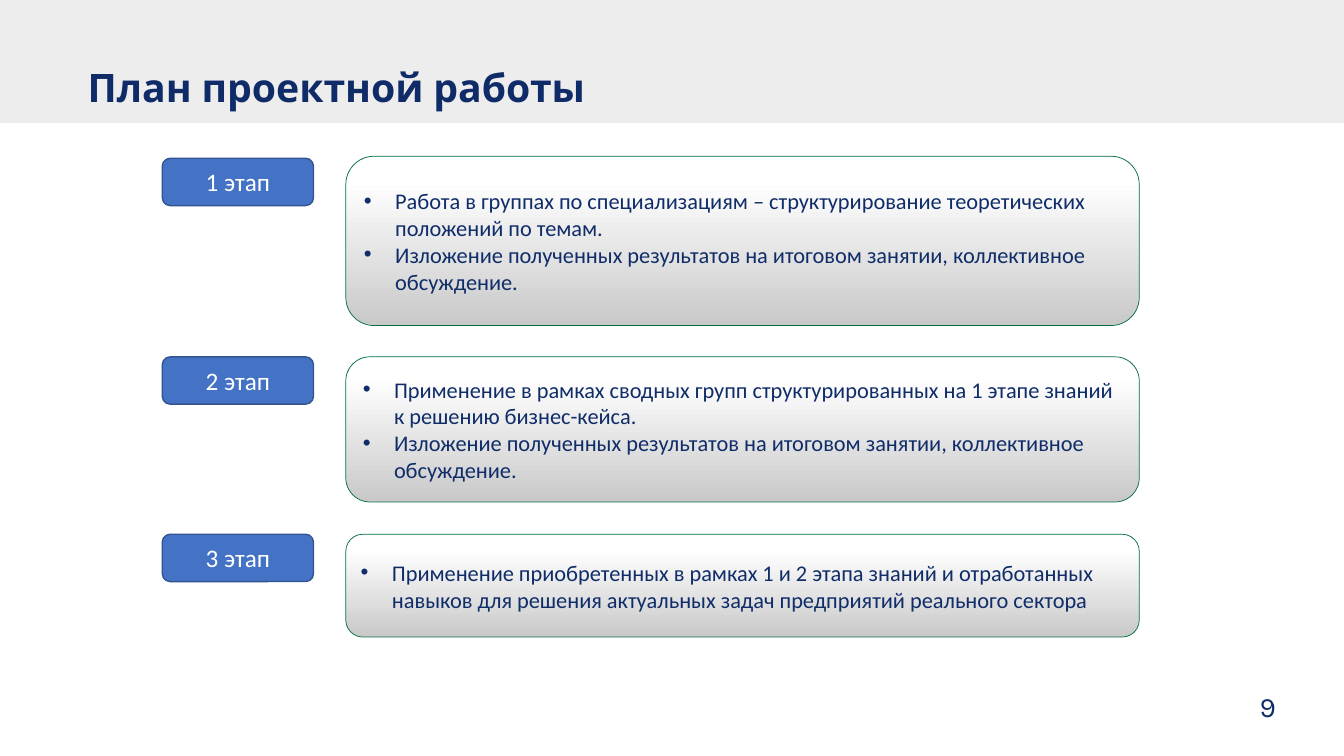
from pptx import Presentation
from pptx.dml.color import RGBColor
from pptx.enum.shapes import MSO_SHAPE as Shape
from pptx.enum.text import MSO_ANCHOR as Anchor, PP_ALIGN as Align
from pptx.oxml.ns import qn
from pptx.util import Inches, Pt
from lxml import etree


def color(hexa):
    return RGBColor.from_string(hexa)


def write(par, text, size, font, hexa, align=Align.LEFT, bold=False):
    par.alignment = align
    run = par.add_run()
    run.text = text
    run.font.size = Pt(size)
    run.font.name = font
    run.font.bold = bold
    run.font.color.rgb = color(hexa)


prs = Presentation()
prs.slide_width, prs.slide_height = Inches(13.33), Inches(7.5)
slide = prs.slides.add_slide(prs.slide_layouts[6])
shapes = slide.shapes

# Header band
band = shapes.add_shape(Shape.RECTANGLE, Inches(-0.02), 0, Inches(13.35), Inches(1.22))
band.shadow.inherit = False
band.fill.solid()
band.fill.fore_color.rgb = color("EEEDED")
band.line.fill.background()

# Title and page number
labels = [
    ("План проектной работы", 0.87, 0.63, 11.35, 0.45, 28, "0F2C68", Align.LEFT, True),
    ("9", 12.21, 6.84, 0.73, 0.34, 20, "102D69", Align.CENTER, False),
]
for text, left, top, width, height, size, hexa, align, bold in labels:
    box = shapes.add_textbox(Inches(left), Inches(top), Inches(width), Inches(height))
    frame = box.text_frame
    frame.word_wrap = True
    frame.margin_left = frame.margin_right = 0
    frame.margin_top = frame.margin_bottom = 0
    write(frame.paragraphs[0], text, size, "Karla", hexa, align, bold)

# Stages: tag top, panel top, panel height, bullet items
result = "Изложение полученных результатов на итоговом занятии, коллективное обсуждение."
stages = [
    (1.57, 1.55, 1.68, [
        "Работа в группах по специализациям – структурирование теоретических "
        "положений по темам.", result]),
    (3.54, 3.54, 1.44, [
        "Применение в рамках сводных групп структурированных на 1 этапе знаний "
        "к решению бизнес-кейса.", result]),
    (5.3, 5.3, 1.02, [
        "Применение приобретенных в рамках 1 и 2 этапа знаний и отработанных "
        "навыков для решения актуальных задач предприятий реального сектора"]),
]
for num, (y, top, height, items) in enumerate(stages, 1):
    # Blue tag
    tag = shapes.add_shape(Shape.ROUNDED_RECTANGLE, Inches(1.61), Inches(y),
                           Inches(1.5), Inches(0.47))
    tag.shadow.inherit = False
    tag.fill.solid()
    tag.fill.fore_color.rgb = color("4472C4")
    tag.line.color.rgb = color("325491")
    tag.line.width = Pt(1)
    tag.text_frame.vertical_anchor = Anchor.MIDDLE
    write(tag.text_frame.paragraphs[0], f"{num} этап", 18, "Calibri", "FFFFFF", Align.CENTER)

    # Panel, grey at the foot and white at the head
    panel = shapes.add_shape(Shape.ROUNDED_RECTANGLE, Inches(3.43), Inches(top),
                             Inches(7.87), Inches(height))
    panel.shadow.inherit = False
    panel.fill.gradient()
    panel.fill.gradient_angle = 90
    for stop, (pos, hexa) in zip(panel.fill.gradient_stops, [(0, "C9C9C9"), (0.86, "FFFFFF")]):
        stop.position = pos
        stop.color.rgb = color(hexa)
    panel.line.color.rgb = color("00703C")
    panel.line.width = Pt(0.5)

    # Bullets
    frame = panel.text_frame
    frame.word_wrap = True
    frame.vertical_anchor = Anchor.MIDDLE
    for idx, item in enumerate(items):
        par = frame.add_paragraph() if idx else frame.paragraphs[0]
        props = par._p.get_or_add_pPr()
        props.set("marL", str(Inches(0.31)))
        props.set("indent", str(-Inches(0.31)))
        etree.SubElement(props, qn("a:buFont")).set("typeface", "Arial")
        etree.SubElement(props, qn("a:buChar")).set("char", "•")
        write(par, item, 16, "Calibri", "102D69")

prs.save("out.pptx")
